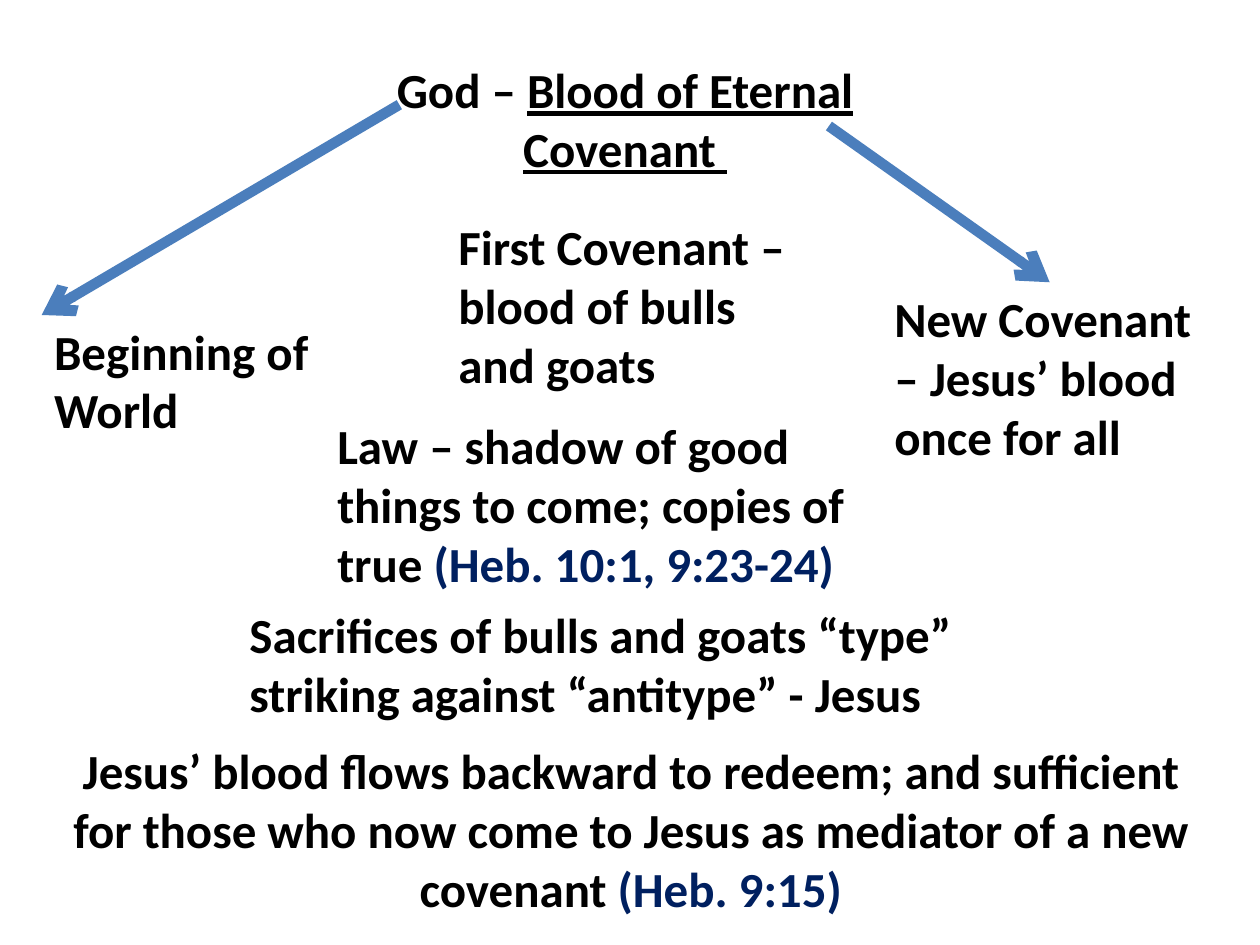
from lxml import etree
from pptx import Presentation
from pptx.dml.color import RGBColor
from pptx.enum.shapes import MSO_CONNECTOR
from pptx.enum.text import MSO_AUTO_SIZE, PP_ALIGN
from pptx.oxml.ns import qn
from pptx.util import Cm, Pt

BLACK = RGBColor(0x00, 0x00, 0x00)
NAVY = RGBColor(0x00, 0x20, 0x60)
BLUE = RGBColor(0x4B, 0x7E, 0xBC)
STRAIGHT = MSO_CONNECTOR.STRAIGHT
FIT_SHAPE = MSO_AUTO_SIZE.SHAPE_TO_FIT_TEXT
LEFT, CENTER = PP_ALIGN.LEFT, PP_ALIGN.CENTER

STATEMENT_FONT = {"name": "Calibri", "size": Pt(28), "bold": True}
TWO_LINES, THREE_LINES = 2.64, 3.84


def add_statement(slide, left, top, width, height, phrases, align=LEFT):
    """Place one statement made of (text, colour, underline) phrases."""
    statement = slide.shapes.add_textbox(Cm(left), Cm(top), Cm(width), Cm(height))
    frame = statement.text_frame
    frame.word_wrap = True
    frame.auto_size = FIT_SHAPE
    paragraph = frame.paragraphs[0]
    paragraph.alignment = align
    for text, colour, underline in phrases:
        run = paragraph.add_run()
        run.text = text
        for attribute, value in STATEMENT_FONT.items():
            setattr(run.font, attribute, value)
        run.font.color.rgb = colour
        if underline:
            run.font.underline = True


def add_arrow(slide, start_x, start_y, end_x, end_y):
    """Draw a thick arrow with an open head at its end."""
    arrow = slide.shapes.add_connector(
        STRAIGHT, Cm(start_x), Cm(start_y), Cm(end_x), Cm(end_y))
    arrow.line.color.rgb = BLUE
    arrow.line.width = Pt(6)
    etree.SubElement(arrow.line._get_or_add_ln(), qn("a:tailEnd"), type="arrow")
    etree.SubElement(arrow._element.spPr, qn("a:effectLst"))


def add_covenants(slide, left, top):
    """Place the eternal covenant and the covenants it reaches."""
    add_statement(slide, left + 6.58, top, 10.36, TWO_LINES,
                  [("God – ", BLACK, False),
                   ("Blood of Eternal Covenant ", BLACK, True)], CENTER)
    covenants = [
        (0, 5.28, 6.78, TWO_LINES, "Beginning of World"),
        (8.15, 3.17, 7.42, THREE_LINES, "First Covenant – blood of bulls and goats"),
        (16.94, 4.62, 6.78, THREE_LINES, "New Covenant – Jesus’ blood once for all"),
    ]
    for x, y, width, height, text in covenants:
        add_statement(slide, left + x, top + y, width, height, [(text, BLACK, False)])
    for start_x, start_y, end_x, end_y in [(15.87, 1.47, 20.32, 4.62),
                                           (7.21, 1.04, 0, 5.28)]:
        add_arrow(slide, left + start_x, top + start_y, left + end_x, top + end_y)


def add_teaching(slide, left, top):
    """Place the statements on law, sacrifices and redemption."""
    add_statement(slide, left + 5.48, top, 10.8, THREE_LINES,
                  [("Law – shadow of good things to come; copies of true ", BLACK, False),
                   ("(Heb. 10:1, 9:23-24)", NAVY, False)])
    add_statement(slide, left + 3.71, top + 3.81, 15.88, TWO_LINES,
                  [("Sacrifices of bulls and goats “type” striking against "
                    "“antitype” - Jesus", BLACK, False)])
    add_statement(slide, left, top + 6.55, 23.29, THREE_LINES,
                  [("Jesus’ blood flows backward to redeem; and sufficient for those "
                    "who now come to Jesus as mediator of a new covenant ", BLACK, False),
                   ("(Heb. 9:15)", NAVY, False)], CENTER)


def main():
    """Build and save the slide."""
    presentation = Presentation()
    presentation.slide_width, presentation.slide_height = Cm(25.4), Cm(19.05)
    slide = presentation.slides.add_slide(presentation.slide_layouts[6])
    add_covenants(slide, 0.84, 1.07)
    add_teaching(slide, 1.07, 8.26)
    presentation.save("out.pptx")


if __name__ == "__main__":
    main()
